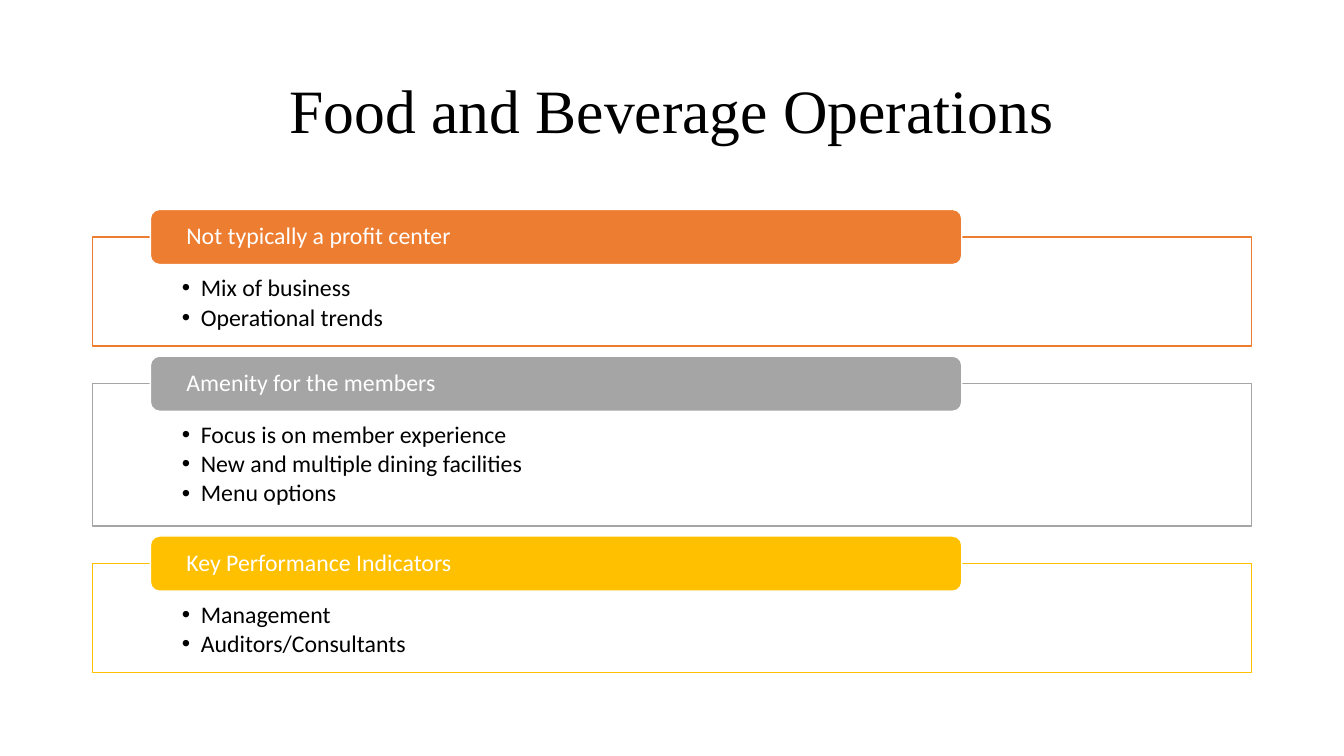
from pptx import Presentation
from pptx.dml.color import RGBColor
from pptx.enum.shapes import MSO_SHAPE as Shape
from pptx.enum.text import MSO_ANCHOR as Anchor, PP_ALIGN as Align
from pptx.oxml.ns import qn
from pptx.util import Pt
from lxml.etree import SubElement

TITLE = "Food and Beverage Operations"
TOPICS = [
    ("Not typically a profit center", "orange",
     ["Mix of business", "Operational trends"]),
    ("Amenity for the members", "gray",
     ["Focus is on member experience", "New and multiple dining facilities",
      "Menu options"]),
    ("Key Performance Indicators", "gold",
     ["Management", "Auditors/Consultants"]),
]
COLORS = {"orange": "ED7D31", "gray": "A5A5A5", "gold": "FFC000",
          "white": "FFFFFF", "black": "000000"}

LEFT, WIDTH, TOP, GAP = 66, 828, 169.3, 27
BASE, ROW = 30.4, 23.7  # box height: base plus one row per bullet
TAB_LEFT, TAB_WIDTH, TAB_HEIGHT, TAB_RISE = 107.4, 579.6, 39.4, 19.7
INDENT = 13.5


def color(name):
    return RGBColor.from_string(COLORS[name])


def style(para, font, size, ink, align):
    para.alignment = align
    para.line_spacing = 0.9
    for run in para.runs:
        run.font.name = font
        run.font.size = Pt(size)
        run.font.color.rgb = color(ink)


def add_block(slide, kind, place, fill, line, insets, anchor, lines, ink):
    """Add a filled shape with left-aligned text and return its paragraphs."""
    block = slide.shapes.add_shape(kind, *map(Pt, place))
    block.shadow.inherit = False
    block.fill.solid()
    block.fill.fore_color.rgb = color(fill)
    block.line.color.rgb = color(line)
    block.line.width = Pt(1)
    frame = block.text_frame
    frame.word_wrap = True
    frame.vertical_anchor = anchor
    (frame.margin_left, frame.margin_top,
     frame.margin_right, frame.margin_bottom) = map(Pt, insets)
    frame.text = "\n".join(lines)
    for para in frame.paragraphs:
        style(para, "Calibri", 17, ink, Align.LEFT)
    return frame.paragraphs


def add_bullet(para):
    para.level = 1
    para.space_after = Pt(2.5)
    props = para._p.get_or_add_pPr()
    props.set("marL", str(Pt(INDENT)))
    props.set("indent", str(-Pt(INDENT)))
    SubElement(props, qn("a:buFont")).set("typeface", "Arial")
    SubElement(props, qn("a:buChar")).set("char", "•")


def main():
    deck = Presentation()
    deck.slide_width, deck.slide_height = Pt(960), Pt(540)
    slide = deck.slides.add_slide(deck.slide_layouts[5])

    title = slide.shapes.title
    title.left, title.top, title.width, title.height = map(
        Pt, (LEFT, 28.8, WIDTH, 104.4))
    title.text_frame.text = TITLE
    title.text_frame.vertical_anchor = Anchor.MIDDLE
    style(title.text_frame.paragraphs[0], "Times New Roman", 44, "black",
          Align.CENTER)

    top = TOP
    for head, hue, points in TOPICS:
        height = BASE + ROW * len(points)
        paras = add_block(slide, Shape.RECTANGLE, (LEFT, top, WIDTH, height),
                          "white", hue, (64, 28, 64, 9), Anchor.TOP,
                          points, "black")
        for para in paras:
            add_bullet(para)
        add_block(slide, Shape.ROUNDED_RECTANGLE,
                  (TAB_LEFT, top - TAB_RISE, TAB_WIDTH, TAB_HEIGHT),
                  hue, "white", (23.8, 0, 23.8, 0), Anchor.MIDDLE,
                  [head], "white")
        top += height + GAP

    deck.save("out.pptx")


if __name__ == "__main__":
    main()
